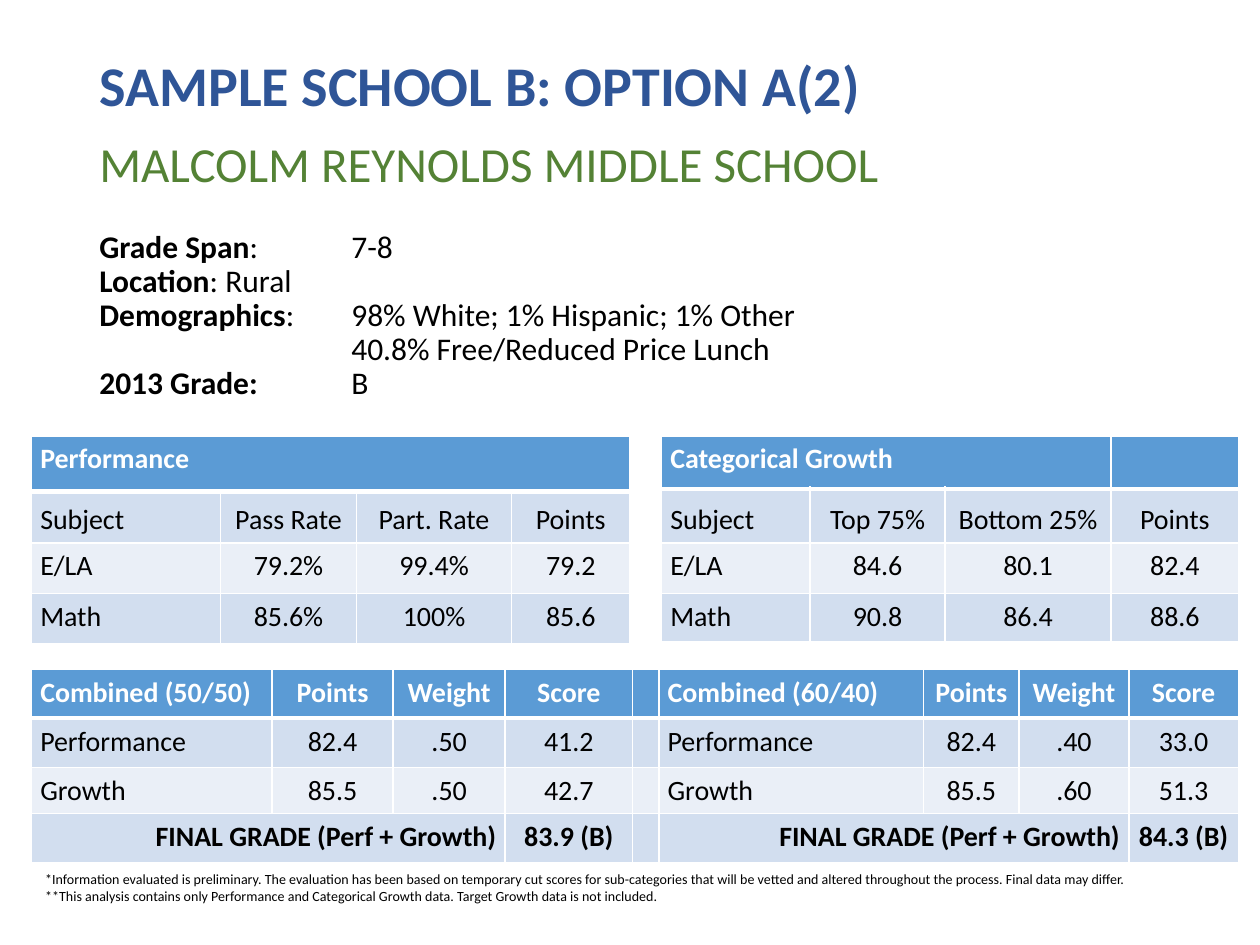
from lxml import etree
from pptx import Presentation
from pptx.dml.color import RGBColor
from pptx.enum.text import MSO_ANCHOR, MSO_AUTO_SIZE, PP_ALIGN
from pptx.oxml.ns import qn
from pptx.util import Inches, Pt

LEFT, CENTER, RIGHT = PP_ALIGN.LEFT, PP_ALIGN.CENTER, PP_ALIGN.RIGHT
TOP, MIDDLE, BOTTOM = MSO_ANCHOR.TOP, MSO_ANCHOR.MIDDLE, MSO_ANCHOR.BOTTOM
NO_FIT = MSO_AUTO_SIZE.NONE

NAVY = RGBColor(0x2F, 0x55, 0x97)
GREEN = RGBColor(0x54, 0x82, 0x35)
BLACK = RGBColor(0, 0, 0)
WHITE = RGBColor(0xFF, 0xFF, 0xFF)
HEADER_BLUE = RGBColor(0x5B, 0x9B, 0xD5)
BANDS = (RGBColor(0xEA, 0xEF, 0xF7), RGBColor(0xD2, 0xDE, 0xEF))

FONT = "Calibri"
PAGE_WIDTH, PAGE_HEIGHT = 10, 7.5
TEXT_LEFT, TEXT_WIDTH = 0.69, 8.62
TABLE_LEFT, RIGHT_TABLE_LEFT = 0.25, 5.25
UPPER_TOP, LOWER_TOP = 3.46, 5.31
FINAL_LABEL = "FINAL GRADE (Perf + Growth)"

# In table rows, None continues the cell to its left.
PERFORMANCE = [
    ["Performance", None, None, None],
    ["Subject", "Pass Rate", "Part. Rate", "Points"],
    ["E/LA", "79.2%", "99.4%", "79.2"],
    ["Math", "85.6%", "100%", "85.6"],
]
GROWTH = [
    ["Categorical Growth", None, None, ""],
    ["Subject", "Top 75%", "Bottom 25%", "Points"],
    ["E/LA", "84.6", "80.1", "82.4"],
    ["Math", "90.8", "86.4", "88.6"],
]
COMBINED = [
    ["Combined (50/50)", "Points", "Weight", "Score", "",
     "Combined (60/40)", "Points", "Weight", "Score"],
    ["Performance", "82.4", ".50", "41.2", "", "Performance", "82.4", ".40", "33.0"],
    ["Growth", "85.5", ".50", "42.7", "", "Growth", "85.5", ".60", "51.3"],
    [FINAL_LABEL, None, None, "83.9 (B)", "", FINAL_LABEL, None, None, "84.3 (B)"],
]
FACTS = [
    ("Grade Span", ": \t7-8"),
    ("Location", ": \tRural"),
    ("Demographics", ": \t98% White; 1% Hispanic; 1% Other"),
    ("", "\t\t40.8% Free/Reduced Price Lunch"),
    ("2013 Grade:", "\tB"),
]
FOOTNOTES = [
    "*Information evaluated is preliminary. The evaluation has been based on temporary "
    "cut scores for sub-categories that will be vetted and altered throughout the process. "
    "Final data may differ.",
    "**This analysis contains only Performance and Categorical Growth data. "
    "Target Growth data is not included.",
]


def style(para, size, color, bold=False, align=LEFT):
    para.alignment = align
    para.font.name = FONT
    para.font.size = Pt(size)
    para.font.color.rgb = color
    para.font.bold = bold


def add_text_frame(page, left, top, width, height):
    box = page.shapes.add_textbox(*map(Inches, (left, top, width, height)))
    box.text_frame.word_wrap = True
    return box.text_frame


def fill_title(page, text):
    title = page.shapes.title
    title.left, title.top = Inches(TEXT_LEFT), Inches(0.34)
    title.width, title.height = Inches(TEXT_WIDTH), Inches(0.72)
    frame = title.text_frame
    frame.auto_size = NO_FIT
    frame.vertical_anchor = MIDDLE
    frame.text = text
    style(frame.paragraphs[0], 32, NAVY, bold=True)
    frame.paragraphs[0].line_spacing = 0.9


def set_tab_stops(para, *stops):
    tabs = etree.Element(qn("a:tabLst"))
    for stop in stops:
        etree.SubElement(tabs, qn("a:tab"), pos=str(Inches(stop)), algn="l")
    para.font  # creates the default run properties that must follow the tabs
    para._p.pPr.find(qn("a:defRPr")).addprevious(tabs)


def add_school_profile(page, school, facts):
    frame = add_text_frame(page, TEXT_LEFT, 1.06, TEXT_WIDTH, 2.3)
    heading = frame.paragraphs[0]
    heading.text = school
    heading.line_spacing = 0.9
    style(heading, 28, GREEN)
    for index, (label, value) in enumerate(facts):
        para = frame.add_paragraph()
        style(para, 18, BLACK)
        para.line_spacing = 0.9
        para.space_before = Pt(0 if index else 22)
        set_tab_stops(para, 1, 2)
        if label:
            span = para.add_run()
            span.text = label
            span.font.bold = True
        para.add_run().text = value


def set_borders(cell, top=1, bottom=1):
    """Draw white cell borders, with widths in points."""
    properties = cell._tc.get_or_add_tcPr()
    for side, width in (("L", 1), ("R", 1), ("T", top), ("B", bottom)):
        line = etree.SubElement(properties, qn(f"a:ln{side}"), w=str(Pt(width)))
        fill = etree.SubElement(line, qn("a:solidFill"))
        etree.SubElement(fill, qn("a:srgbClr"), val=str(WHITE))


def format_cell(cell, text, row, align, bold, anchor):
    set_borders(cell, top=3 if row == 1 else 1, bottom=3 if row == 0 else 1)
    cell.fill.solid()
    cell.fill.fore_color.rgb = BANDS[row % 2] if row else HEADER_BLUE
    cell.margin_left = cell.margin_right = Inches(0.07)
    cell.margin_top = cell.margin_bottom = Inches(0.05)
    cell.vertical_anchor = anchor
    para = cell.text_frame.paragraphs[0]
    if text:
        para.text = text
    style(para, 16, BLACK if row else WHITE, bold, align)


def add_score_table(page, left, top, widths, heights, rows, label_columns=(0,),
                    subheader=False):
    frame = page.shapes.add_table(
        len(rows), len(widths),
        *map(Inches, (left, top, sum(widths), sum(heights))))
    table = frame.table
    table.first_row = table.horz_banding = False
    for column, width in zip(table.columns, widths):
        column.width = Inches(width)
    for table_row, height in zip(table.rows, heights):
        table_row.height = Inches(height)
    for r, row in enumerate(rows):
        for c, text in enumerate(row):
            align = LEFT if c in label_columns else CENTER
            if text == FINAL_LABEL:
                align = RIGHT
            format_cell(table.cell(r, c), text, r, align,
                        bold=r == 0 or FINAL_LABEL in row,
                        anchor=BOTTOM if subheader and r == 1 else TOP)
        for c, text in enumerate(row):
            end = c
            while end + 1 < len(row) and row[end + 1] is None:
                end += 1
            if text is not None and end > c:
                table.cell(r, c).merge(table.cell(r, end))


def add_footnotes(page, notes):
    frame = add_text_frame(page, 0.26, 6.86, 9.62, 0.37)
    for index, note in enumerate(notes):
        para = frame.add_paragraph() if index else frame.paragraphs[0]
        para.text = note
        style(para, 8, BLACK)


def main():
    deck = Presentation()
    deck.slide_width, deck.slide_height = Inches(PAGE_WIDTH), Inches(PAGE_HEIGHT)
    page = deck.slides.add_slide(deck.slide_layouts.get_by_name("Title Only"))
    fill_title(page, "SAMPLE SCHOOL B: OPTION A(2)")
    add_school_profile(page, "MALCOLM REYNOLDS MIDDLE SCHOOL", FACTS)
    add_score_table(page, TABLE_LEFT, UPPER_TOP, [1.5, 1.08, 1.23, 0.94],
                    [0.44, 0.41, 0.4, 0.4], PERFORMANCE, subheader=True)
    add_score_table(page, RIGHT_TABLE_LEFT, UPPER_TOP, [1.18, 1.07, 1.32, 1.01],
                    [0.42, 0.43, 0.4, 0.38], GROWTH, subheader=True)
    add_score_table(page, TABLE_LEFT, LOWER_TOP,
                    [1.91, 0.96, 0.89, 1.01, 0.21, 2.1, 0.76, 0.87, 0.87],
                    [0.39, 0.39, 0.36, 0.39], COMBINED, label_columns=(0, 5))
    add_footnotes(page, FOOTNOTES)
    deck.save("out.pptx")


if __name__ == "__main__":
    main()
